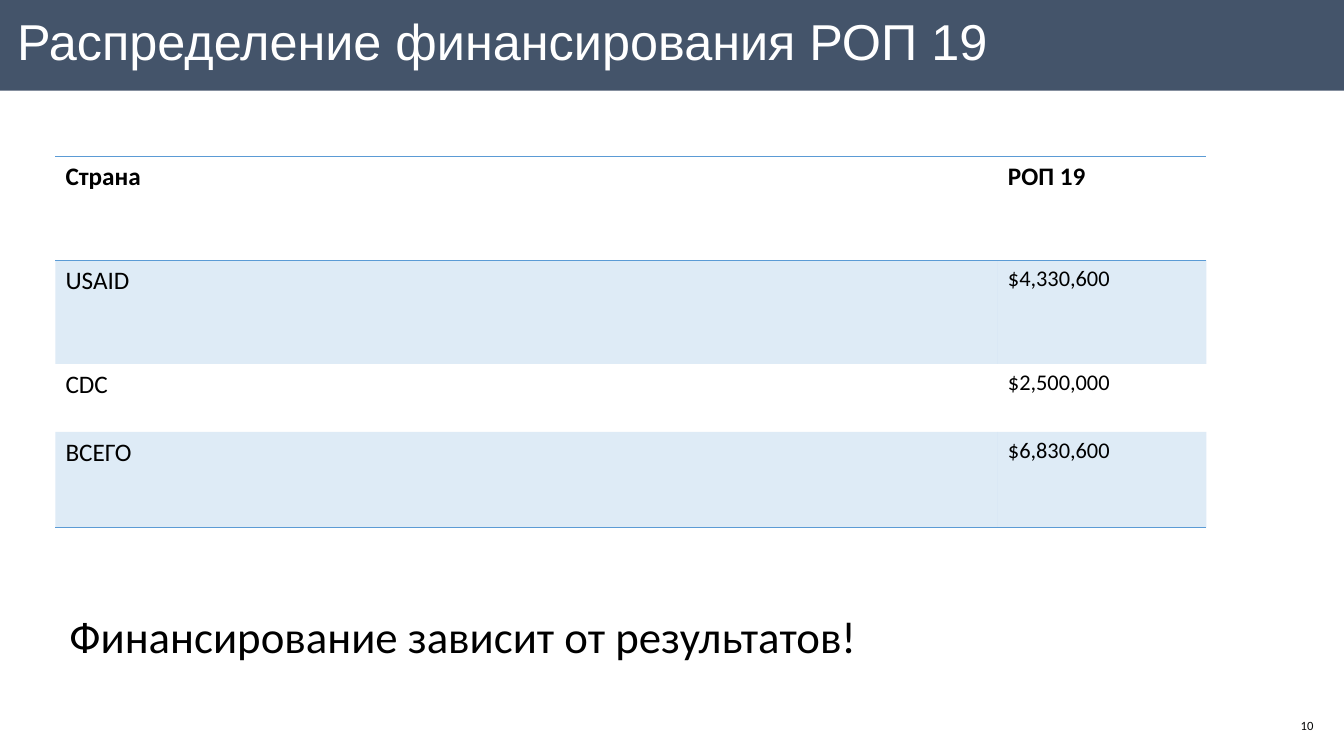
from lxml.etree import SubElement
from pptx import Presentation
from pptx.dml.color import RGBColor
from pptx.enum.shapes import MSO_SHAPE
from pptx.enum.text import MSO_ANCHOR, PP_ALIGN
from pptx.oxml import parse_xml
from pptx.oxml.ns import nsdecls, qn
from pptx.util import Pt

COLORS = {
    "band": "44546A",
    "accent": "5B9BD5",
    "white": "FFFFFF",
    "black": "000000",
    "number": "050606",
}
PLAIN_TABLE_STYLE = "{2D5ABB26-0587-4C30-8999-92F81FD0307C}"
FUNDING = [
    ("Страна", "РОП 19"),
    ("USAID", "$4,330,600"),
    ("CDC", "$2,500,000"),
    ("ВСЕГО", "$6,830,600"),
]


class SlideBuilder:
    def __init__(self, slide, font="Calibri"):
        self.slide = slide
        self.font = font

    def color(self, name):
        return RGBColor.from_string(COLORS[name])

    def add_text_run(self, paragraph, text, size, color="black", bold=False, font=None):
        run = paragraph.add_run()
        run.text = text
        run.font.name = font or self.font
        run.font.size = Pt(size)
        run.font.bold = bold
        run.font.color.rgb = self.color(color)

    def rectangle(self, left, top, width, height, fill):
        shape = self.slide.shapes.add_shape(
            MSO_SHAPE.RECTANGLE, Pt(left), Pt(top), Pt(width), Pt(height))
        shape.shadow.inherit = False
        shape.fill.solid()
        shape.fill.fore_color.rgb = self.color(fill)
        shape.line.fill.background()

    def text(self, left, top, width, height, text, size, color="black", font=None,
             insets=(7.2, 3.6), anchor=MSO_ANCHOR.TOP, align=PP_ALIGN.LEFT, spacing=1.0):
        box = self.slide.shapes.add_textbox(Pt(left), Pt(top), Pt(width), Pt(height))
        frame = box.text_frame
        frame.word_wrap = True
        frame.vertical_anchor = anchor
        frame.margin_left = frame.margin_right = Pt(insets[0])
        frame.margin_top = frame.margin_bottom = Pt(insets[1])
        paragraph = frame.paragraphs[0]
        paragraph.alignment = align
        paragraph.line_spacing = spacing
        self.add_text_run(paragraph, text, size, color, font=font)

    def border(self, cell, sides):
        properties = cell._tc.get_or_add_tcPr()
        for index, side in enumerate(sides):
            properties.insert(index, parse_xml(
                f'<a:ln{side} {nsdecls("a")} w="{Pt(1)}"><a:solidFill>'
                f'<a:srgbClr val="{COLORS["accent"]}"/></a:solidFill></a:ln{side}>'))

    def tint(self, cell, percent):
        cell.fill.solid()
        cell.fill.fore_color.rgb = self.color("accent")
        color = cell._tc.tcPr.find(qn("a:solidFill")).find(qn("a:srgbClr"))
        SubElement(color, qn("a:alpha"), val=str(percent * 1000))

    def table(self, left, top, widths, heights, rows):
        frame = self.slide.shapes.add_table(
            len(rows), len(widths), Pt(left), Pt(top), Pt(sum(widths)), Pt(sum(heights)))
        table = frame.table
        table._tbl.tblPr.find(qn("a:tableStyleId")).text = PLAIN_TABLE_STYLE
        for column, width in zip(table.columns, widths):
            column.width = Pt(width)
        for row, height in zip(table.rows, heights):
            row.height = Pt(height)
        borders = {0: "TB", len(rows) - 1: "B"}
        for row_index, values in enumerate(rows):
            header = row_index == 0
            for column_index, value in enumerate(values):
                cell = table.cell(row_index, column_index)
                size = 18 if header or column_index == 0 else 16
                self.add_text_run(cell.text_frame.paragraphs[0], value, size, bold=header)
                if row_index % 2:
                    self.tint(cell, 20)
                else:
                    cell.fill.background()
                self.border(cell, borders.get(row_index, ""))


def main():
    presentation = Presentation()
    presentation.slide_width = Pt(960)
    presentation.slide_height = Pt(540)
    slide = presentation.slides.add_slide(presentation.slide_layouts[6])
    builder = SlideBuilder(slide)

    builder.rectangle(0, 0, 960, 64.8, "band")
    builder.text(899.3, 504, 46, 28.8, "10", 9, "number",
                 anchor=MSO_ANCHOR.MIDDLE, align=PP_ALIGN.RIGHT)
    builder.text(12.2, 15.8, 921, 36, "Распределение финансирования РОП 19", 36, "white",
                 font="Arial", insets=(0, 0), spacing=0.8)
    builder.table(39.6, 111.6, [673.2, 149], [74.2, 74.2, 48.6, 68.4], FUNDING)
    builder.text(42.5, 431.3, 833, 46, "Финансирование зависит от результатов!", 32)

    presentation.save("out.pptx")


if __name__ == "__main__":
    main()
